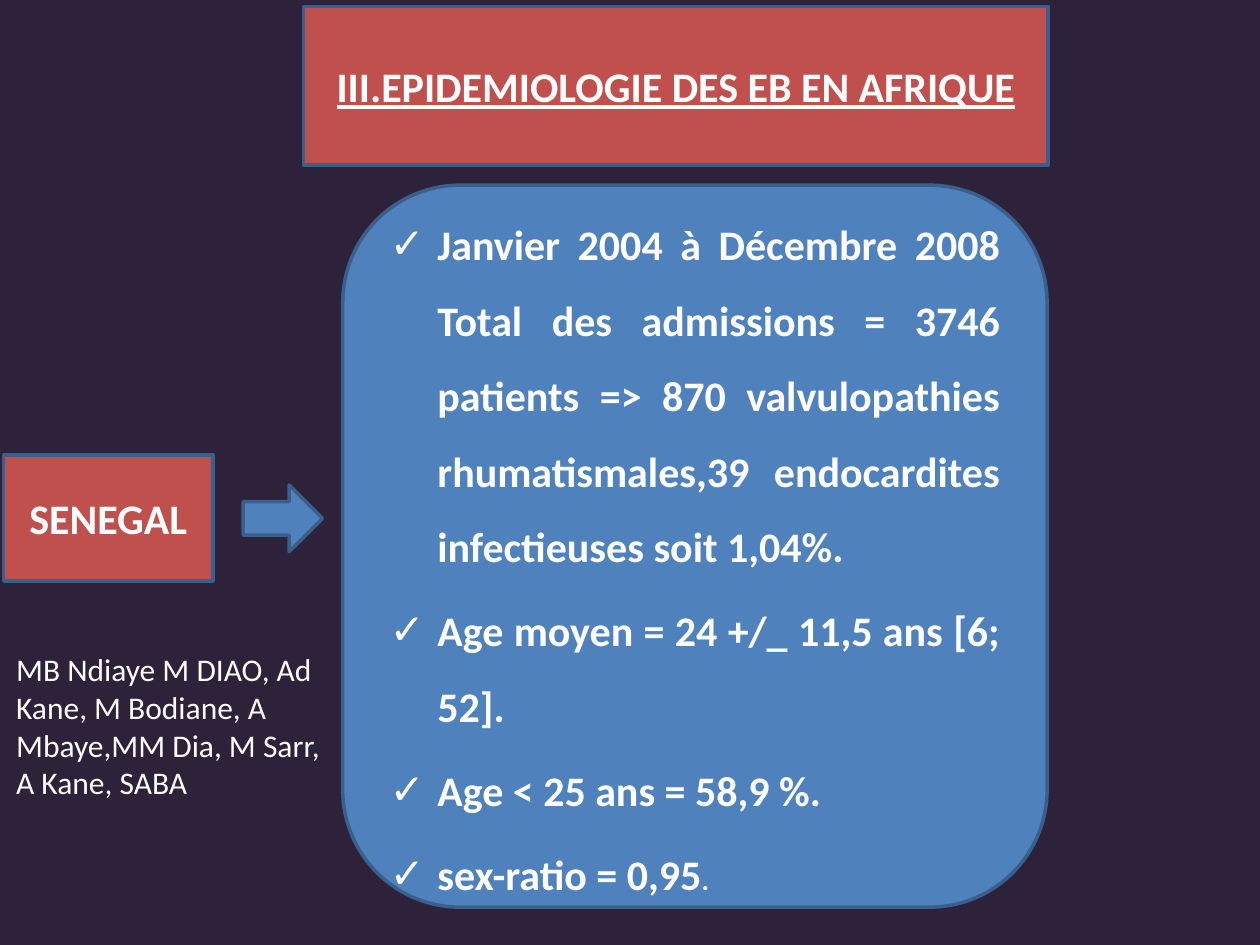
from lxml import etree
from pptx import Presentation
from pptx.dml.color import RGBColor
from pptx.enum.shapes import MSO_SHAPE
from pptx.enum.text import MSO_ANCHOR, MSO_AUTO_SIZE, PP_ALIGN
from pptx.oxml.ns import qn
from pptx.util import Inches, Pt

ELLIPSE = MSO_SHAPE.OVAL
RECTANGLE = MSO_SHAPE.RECTANGLE
ROUNDED = MSO_SHAPE.ROUNDED_RECTANGLE
ARROW = MSO_SHAPE.RIGHT_ARROW
MIDDLE, TOP = MSO_ANCHOR.MIDDLE, MSO_ANCHOR.TOP
LEFT, CENTER, JUSTIFY = PP_ALIGN.LEFT, PP_ALIGN.CENTER, PP_ALIGN.JUSTIFY
NO_FIT = MSO_AUTO_SIZE.NONE

FONT = "Calibri"
COLORS = {
    "background": "2D223A",
    "red": "C0504D",
    "blue": "4F81BD",
    "outline": "3A5F8C",
    "text": "FFFFFF",
}
FINDINGS = [
    [("Janvier 2004 à Décembre 2008 Total des admissions = 3746 patients => 870 "
      "valvulopathies rhumatismales,39 endocardites infectieuses soit 1,04%.", 24)],
    [("Age moyen = 24 +/_ 11,5 ans [6; 52].", 24)],
    [("Age < 25 ans = 58,9 %.", 24)],
    [("sex-ratio = 0,95", 24), (".", 16)],
]


def color(name):
    return RGBColor.from_string(COLORS[name])


def paint(shape, fill):
    shape.fill.solid()
    shape.fill.fore_color.rgb = color(fill)
    shape.line.color.rgb = color("outline")
    shape.line.width = Pt(2)


def add_block(page, kind, box, fill):
    shape = page.shapes.add_shape(kind, *map(Inches, box))
    shape.shadow.inherit = False
    paint(shape, fill)
    return shape


def add_span(para, text, size=24, bold=True, underline=None):
    span = para.add_run()
    span.text = text
    span.font.name = FONT
    span.font.size = Pt(size)
    span.font.bold = bold
    span.font.underline = underline
    span.font.color.rgb = color("text")


def write(shape, text, align=CENTER, anchor=MIDDLE, **style):
    frame = shape.text_frame
    frame.word_wrap = True
    frame.auto_size = NO_FIT
    frame.vertical_anchor = anchor
    para = frame.paragraphs[0]
    para.alignment = align
    add_span(para, text, **style)


def add_check_bullet(para):
    properties = para._p.get_or_add_pPr()
    indent = Inches(0.38)
    properties.set("marL", str(indent))
    properties.set("indent", str(-indent))
    etree.SubElement(properties, qn("a:buFont")).set("typeface", "Arial")
    etree.SubElement(properties, qn("a:buChar")).set("char", "✓")


def build_title(page, box):
    title = page.shapes.title
    title.left, title.top, title.width, title.height = map(Inches, box)
    outline = etree.SubElement(title._element.spPr, qn("a:prstGeom"))
    outline.set("prst", "ellipse")
    etree.SubElement(outline, qn("a:avLst"))
    paint(title, "red")
    write(title, "III.EPIDEMIOLOGIE DES EB EN AFRIQUE", underline=True)


def build_findings(page, box):
    panel = add_block(page, ROUNDED, box, "blue")
    frame = panel.text_frame
    frame.word_wrap = True
    frame.vertical_anchor = MIDDLE
    for index, spans in enumerate(FINDINGS):
        para = frame.add_paragraph() if index else frame.paragraphs[0]
        para.alignment = JUSTIFY
        para.line_spacing = 1.5
        para.space_before = Pt(4.8)
        add_check_bullet(para)
        for text, size in spans:
            add_span(para, text, size=size)


def build_country(page, box):
    left, top, width, height = box
    # Country label
    label = add_block(page, RECTANGLE, (left, top, 1.66, 1), "red")
    write(label, "SENEGAL")
    # Arrow to the findings
    add_block(page, ARROW, (left + 1.9, top + 0.24, 0.63, 0.53), "blue")
    # Authors of the study
    authors = page.shapes.add_textbox(
        *map(Inches, (left, top + 1.5, width, height - 1.5)))
    write(authors, "MB Ndiaye M DIAO, Ad Kane, M Bodiane, A Mbaye,MM Dia, "
          "M Sarr, A Kane, SABA", align=LEFT, anchor=TOP, size=18, bold=False)


def main():
    deck = Presentation()
    deck.slide_width, deck.slide_height = Inches(10), Inches(7.5)
    page = deck.slides.add_slide(deck.slide_layouts.get_by_name("Title Only"))
    page.background.fill.solid()
    page.background.fill.fore_color.rgb = color("background")

    build_title(page, (2.41, 0.05, 5.91, 1.26))
    build_findings(page, (2.72, 1.47, 5.59, 5.73))
    build_country(page, (0.03, 3.61, 2.68, 2.81))
    deck.save("out.pptx")


if __name__ == "__main__":
    main()
